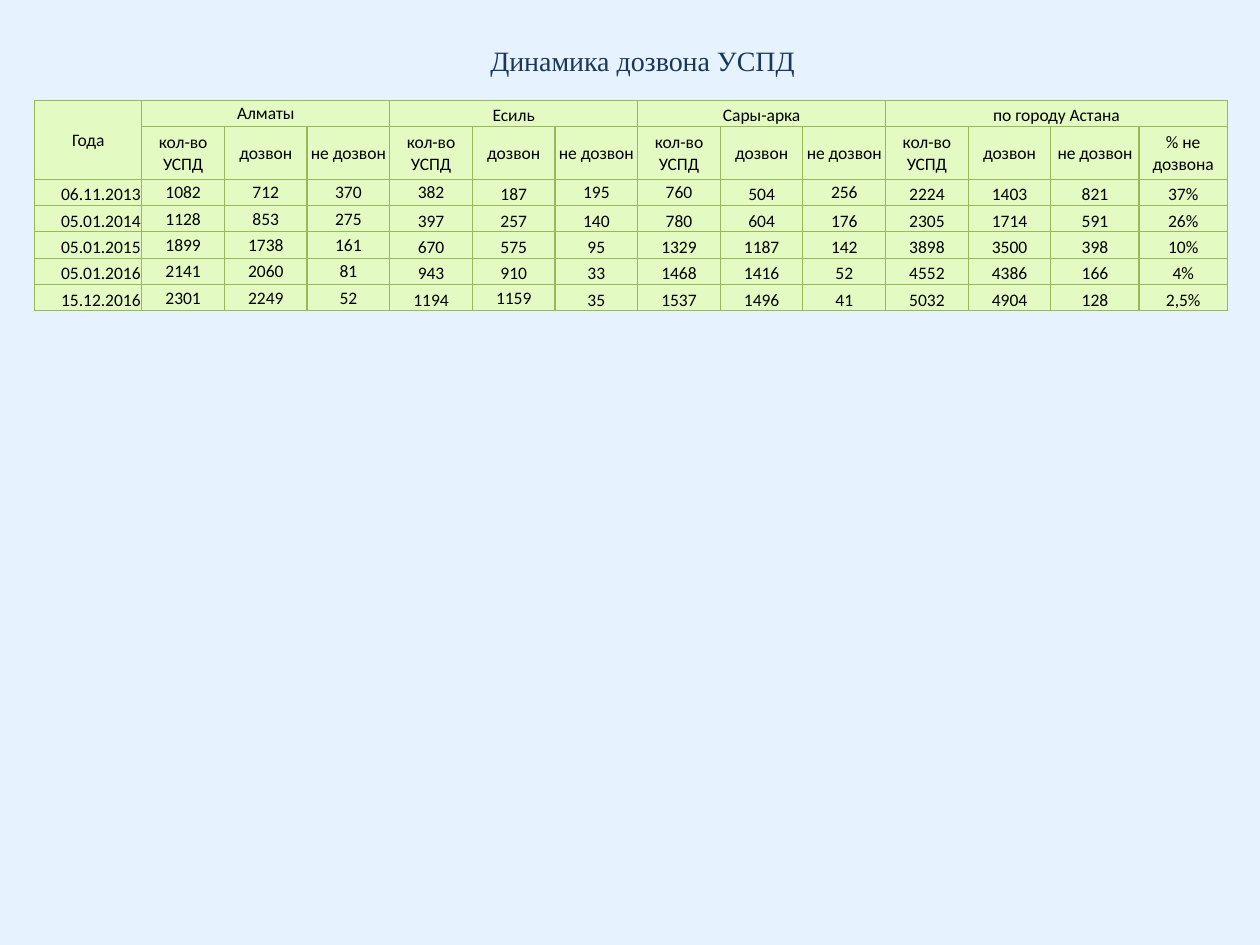
from lxml import etree
from pptx import Presentation
from pptx.dml.color import RGBColor
from pptx.enum.text import MSO_ANCHOR, PP_ALIGN
from pptx.oxml.ns import qn
from pptx.util import Emu, Inches, Pt

CENTER, RIGHT = PP_ALIGN.CENTER, PP_ALIGN.RIGHT
MIDDLE, BOTTOM = MSO_ANCHOR.MIDDLE, MSO_ANCHOR.BOTTOM

COLORS = {"background": "E7F2FF", "cell": "E3FBC2", "border": "98B955",
          "text": "000000", "title": "17375E"}
TITLE_FONT = {"name": "Times New Roman", "size": Pt(16)}
CELL_FONT = {"name": "Calibri", "size": Pt(10)}
CELL_MARGINS = {"margin_left": Inches(0.01), "margin_right": Inches(0.01),
                "margin_top": Inches(0.01), "margin_bottom": 0}

# Boxes as shares of the slide: left, top, width, height
TITLE_BOX = (0.02, 0.039, 0.98, 0.049)
TABLE_BOX = (0.0275, 0.106, 0.947, 0.223)
COLUMN_WEIGHTS = [0.85] + [0.656] * 11 + [0.7] * 2
ROW_WEIGHTS = [1, 2, 1, 1, 1, 1, 1]

DISTRICTS = [("Алматы", 3), ("Есиль", 3), ("Сары-арка", 3), ("по городу Астана", 4)]
MEASURES = ["кол-во УСПД", "дозвон", "не дозвон"]
READINGS = [
    "06.11.2013 1082 712 370 382 187 195 760 504 256 2224 1403 821 37%",
    "05.01.2014 1128 853 275 397 257 140 780 604 176 2305 1714 591 26%",
    "05.01.2015 1899 1738 161 670 575 95 1329 1187 142 3898 3500 398 10%",
    "05.01.2016 2141 2060 81 943 910 33 1468 1416 52 4552 4386 166 4%",
    "15.12.2016 2301 2249 52 1194 1159 35 1537 1496 41 5032 4904 128 2,5%",
]
# Cells (row, column) outside the first district that are centred vertically
MIDDLE_CELLS = {(0, 0), (2, 4), (2, 6), (2, 7), (2, 9), (6, 5)}


def set_attributes(obj, values):
    for name, value in values.items():
        setattr(obj, name, value)


def slide_box(prs, shares):
    sides = (prs.slide_width, prs.slide_height) * 2
    return [Emu(round(share * side)) for share, side in zip(shares, sides)]


def write(tf, text, font, color, align):
    p = tf.paragraphs[0]
    p.alignment = align
    r = p.add_run()
    r.text = text
    set_attributes(r.font, font)
    r.font.color.rgb = RGBColor.from_string(COLORS[color])


def add_borders(cell):
    tc_pr = cell._tc.get_or_add_tcPr()
    for side in ("lnL", "lnR", "lnT", "lnB"):
        ln = etree.SubElement(tc_pr, qn(f"a:{side}"), w=str(Pt(0.75)))
        fill = etree.SubElement(ln, qn("a:solidFill"))
        etree.SubElement(fill, qn("a:srgbClr"), val=COLORS["border"])


def set_sizes(tracks, attribute, weights, total):
    """Share a length among columns or rows by weight."""
    for track, weight in zip(tracks, weights):
        setattr(track, attribute, Emu(round(total * weight / sum(weights))))


def table_rows():
    """Return the cell texts, with blanks where a merged cell continues."""
    districts = ["Года"]
    for name, span in DISTRICTS:
        districts += [name] + [""] * (span - 1)
    measures = [""] + MEASURES * len(DISTRICTS) + ["% не дозвона"]
    return [districts, measures] + [line.split() for line in READINGS]


def cell_anchor(row, col):
    centred = row == 1 or 1 <= col <= 3 or (row, col) in MIDDLE_CELLS
    return MIDDLE if centred else BOTTOM


def add_title(slide, box):
    tf = slide.shapes.add_textbox(*box).text_frame
    tf.word_wrap = True
    write(tf, "Динамика дозвона УСПД", TITLE_FONT, "title", CENTER)


def add_dial_table(slide, box):
    rows = table_rows()
    table = slide.shapes.add_table(len(rows), len(rows[0]), *box).table
    set_attributes(table, {"first_row": False, "horz_banding": False})
    set_sizes(table.columns, "width", COLUMN_WEIGHTS, box[2])
    set_sizes(table.rows, "height", ROW_WEIGHTS, box[3])

    for i, texts in enumerate(rows):
        for j, text in enumerate(texts):
            cell = table.cell(i, j)
            add_borders(cell)
            cell.fill.solid()
            cell.fill.fore_color.rgb = RGBColor.from_string(COLORS["cell"])
            set_attributes(cell, CELL_MARGINS)
            cell.vertical_anchor = cell_anchor(i, j)
            if text:
                align = RIGHT if j == 0 and i > 1 else CENTER
                write(cell.text_frame, text, CELL_FONT, "text", align)

    table.cell(0, 0).merge(table.cell(1, 0))
    col = 1
    for _, span in DISTRICTS:
        table.cell(0, col).merge(table.cell(0, col + span - 1))
        col += span


def main():
    prs = Presentation()
    prs.slide_width, prs.slide_height = Inches(10), Inches(7.5)
    slide = prs.slides.add_slide(prs.slide_layouts[6])
    background = slide.background.fill
    background.solid()
    background.fore_color.rgb = RGBColor.from_string(COLORS["background"])
    add_dial_table(slide, slide_box(prs, TABLE_BOX))
    add_title(slide, slide_box(prs, TITLE_BOX))
    prs.save("out.pptx")


if __name__ == "__main__":
    main()
